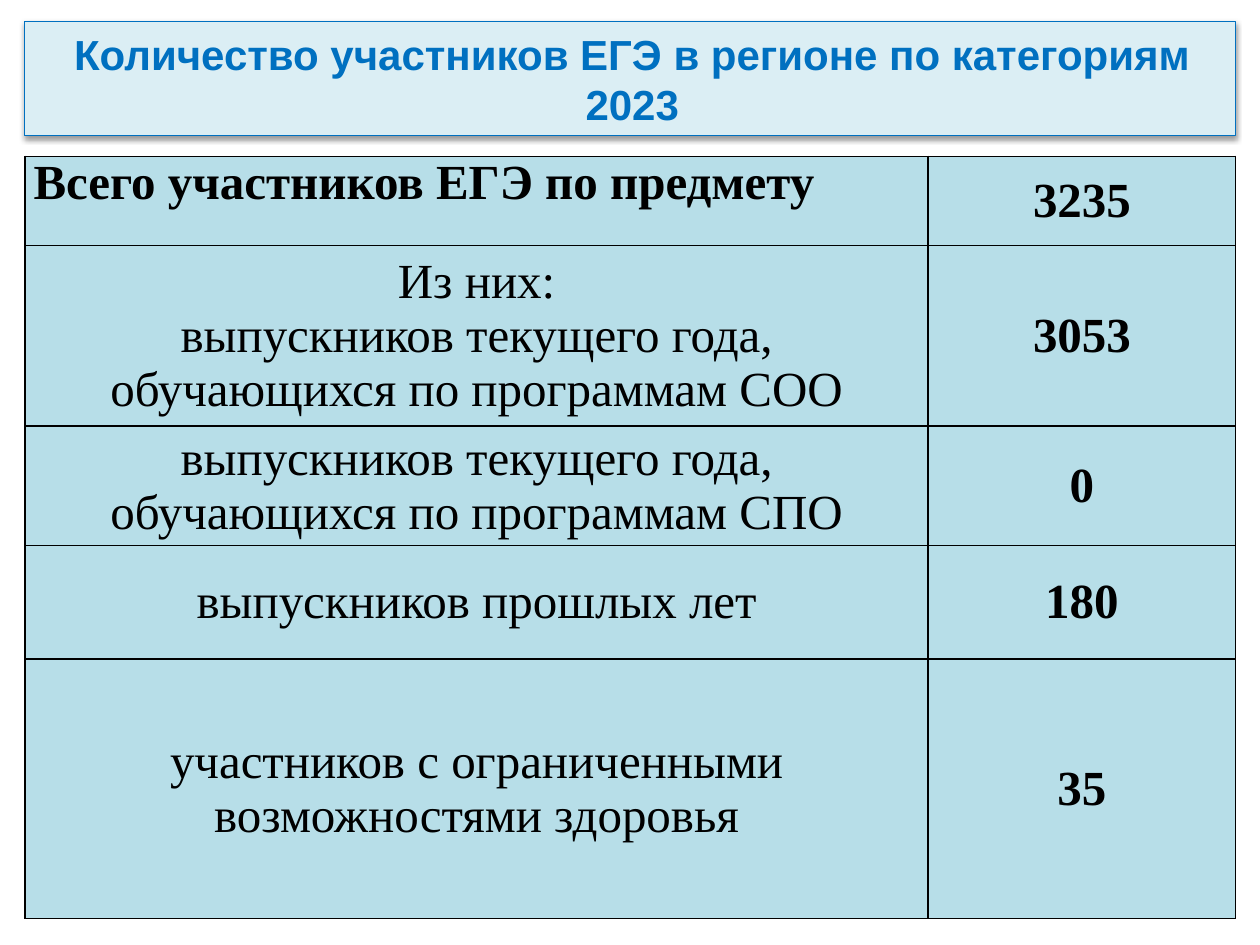
from lxml.etree import SubElement
from pptx import Presentation
from pptx.dml.color import RGBColor
from pptx.enum.shapes import MSO_SHAPE
from pptx.enum.text import MSO_ANCHOR, MSO_AUTO_SIZE, PP_ALIGN
from pptx.oxml.ns import qn
from pptx.util import Pt

BLACK = RGBColor(0x00, 0x00, 0x00)
BLUE = RGBColor(0x00, 0x70, 0xC0)
PALE_BLUE = RGBColor(0xDB, 0xEE, 0xF4)
CELL_BLUE = RGBColor(0xB7, 0xDE, 0xE8)

TITLE_LINES = ["Количество участников ЕГЭ в регионе по категориям", "2023"]
COLUMN_WIDTHS = [516.2, 175.7]
ROW_HEIGHTS = [51.1, 103, 68.4, 64.8, 148.3]
PARTICIPANTS = [
    (["Всего участников ЕГЭ по предмету"], "3235"),
    (["Из них:", "выпускников текущего года, обучающихся по программам СОО"], "3053"),
    (["выпускников текущего года, обучающихся по программам СПО"], "0"),
    (["выпускников прошлых лет"], "180"),
    (["участников с ограниченными возможностями здоровья"], "35"),
]


def write_lines(text_frame, lines, font_name, size, color, bold, alignment=PP_ALIGN.CENTER):
    for index, line in enumerate(lines):
        paragraph = text_frame.add_paragraph() if index else text_frame.paragraphs[0]
        paragraph.alignment = alignment
        run = paragraph.add_run()
        run.text = line
        run.font.name = font_name
        run.font.size = Pt(size)
        run.font.bold = bold
        run.font.color.rgb = color


def add_shadow(shape):
    shape.shadow.inherit = False
    effects = shape.element.spPr.find(qn("a:effectLst"))
    shadow = SubElement(effects, qn("a:outerShdw"), blurRad=str(Pt(3.1)),
                        dist=str(Pt(1.6)), dir="5400000", rotWithShape="0")
    color = SubElement(shadow, qn("a:srgbClr"), val=str(BLACK))
    SubElement(color, qn("a:alpha"), val="38000")


def add_borders(cell):
    properties = cell._tc.get_or_add_tcPr()
    for position, side in enumerate(("lnL", "lnR", "lnT", "lnB")):
        line = SubElement(properties, qn(f"a:{side}"), w=str(Pt(1)))
        properties.insert(position, line)
        fill = SubElement(line, qn("a:solidFill"))
        SubElement(fill, qn("a:srgbClr"), val=str(BLACK))


def add_title(slide, left, top, width, height):
    shape = slide.shapes.add_shape(MSO_SHAPE.RECTANGLE, Pt(left), Pt(top), Pt(width), Pt(height))
    shape.fill.solid()
    shape.fill.fore_color.rgb = PALE_BLUE
    shape.line.color.rgb = BLUE
    shape.line.width = Pt(0.75)
    add_shadow(shape)
    text_frame = shape.text_frame
    text_frame.word_wrap = True
    text_frame.auto_size = MSO_AUTO_SIZE.SHAPE_TO_FIT_TEXT
    text_frame.vertical_anchor = MSO_ANCHOR.MIDDLE
    write_lines(text_frame, TITLE_LINES, "Arial", 24, BLUE, True)
    for paragraph in text_frame.paragraphs:
        paragraph._p.get_or_add_pPr().set("indent", str(Pt(2.2)))


def fill_cell(cell, lines, bold, alignment, anchor):
    cell.margin_left = cell.margin_right = Pt(5)
    cell.margin_top = cell.margin_bottom = Pt(0)
    cell.vertical_anchor = anchor
    cell.fill.solid()
    cell.fill.fore_color.rgb = CELL_BLUE
    add_borders(cell)
    write_lines(cell.text_frame, lines, "Times New Roman", 28, BLACK, bold, alignment)


def add_participants_table(slide, left, top, width, height):
    table = slide.shapes.add_table(len(PARTICIPANTS), len(COLUMN_WIDTHS),
                                   Pt(left), Pt(top), Pt(width), Pt(height)).table
    table.first_row = table.horz_banding = False
    for column, column_width in zip(table.columns, COLUMN_WIDTHS):
        column.width = Pt(column_width)
    for index, (lines, count) in enumerate(PARTICIPANTS):
        table.rows[index].height = Pt(ROW_HEIGHTS[index])
        total = index == 0
        fill_cell(table.cell(index, 0), lines, total,
                  PP_ALIGN.JUSTIFY if total else PP_ALIGN.CENTER,
                  MSO_ANCHOR.TOP if total else MSO_ANCHOR.MIDDLE)
        fill_cell(table.cell(index, 1), [count], True, PP_ALIGN.CENTER, MSO_ANCHOR.MIDDLE)


def main():
    presentation = Presentation()
    presentation.slide_width = Pt(720)
    presentation.slide_height = Pt(540)
    slide = presentation.slides.add_slide(presentation.slide_layouts[6])
    left, width = 14.2, sum(COLUMN_WIDTHS)
    add_participants_table(slide, left, 89.3, width, sum(ROW_HEIGHTS))
    add_title(slide, left, 12.1, width, 65.4)
    presentation.save("out.pptx")


if __name__ == "__main__":
    main()
